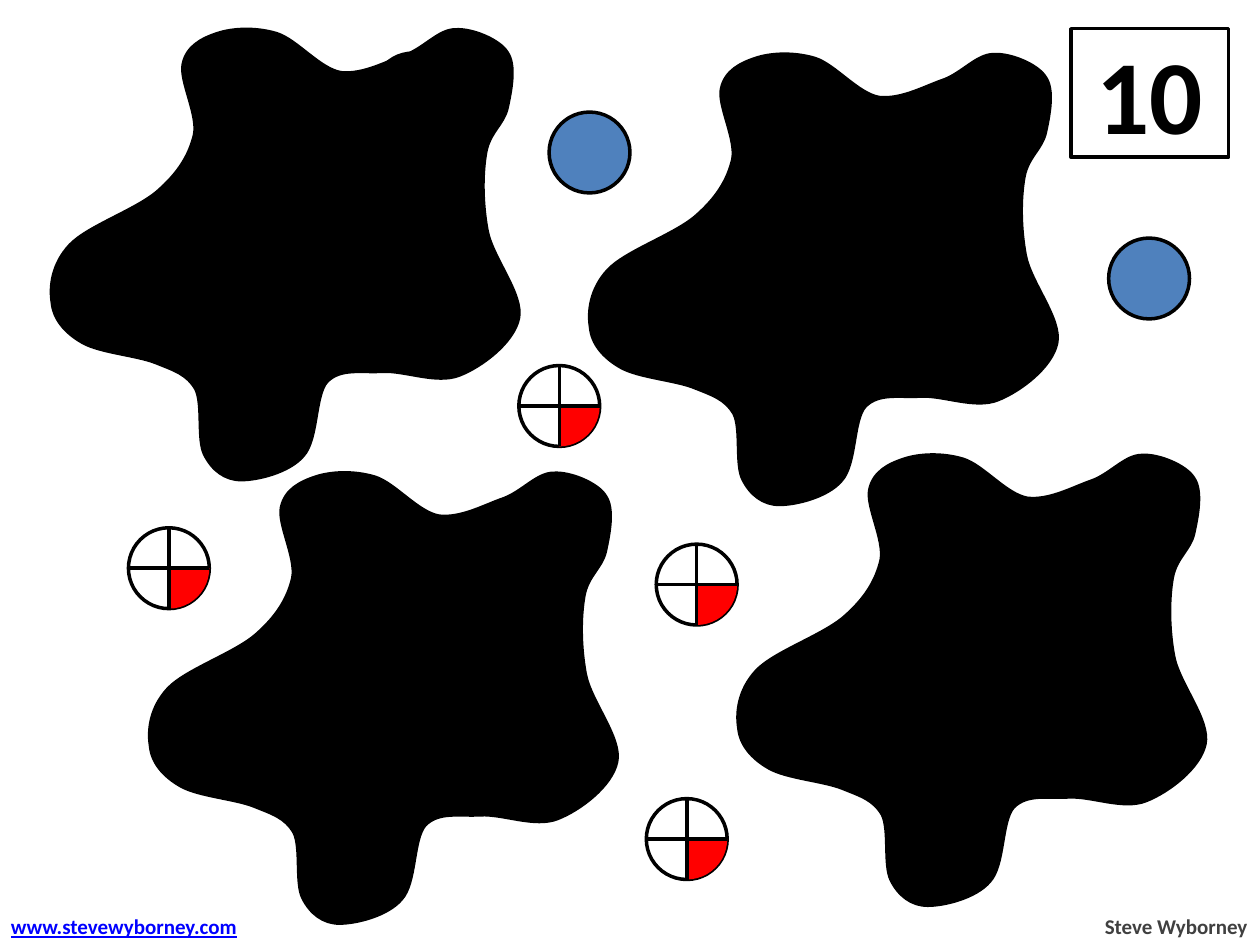
from lxml import etree
from pptx import Presentation
from pptx.dml.color import RGBColor
from pptx.enum import shapes, text
from pptx.oxml import ns
from pptx.util import Cm, Pt


def rgb(hex_colour):
    return RGBColor.from_string(hex_colour)


def paint(shape, fill=None, line=None):
    """Set fill and line, and take the shadow away."""
    if fill:
        shape.fill.solid()
        shape.fill.fore_color.rgb = rgb(fill)
    if line:
        shape.line.color.rgb = rgb(line)
        shape.line.width = Pt(2)
    elif fill:
        shape.line.fill.background()
    if hasattr(shape, "shadow"):
        shape.shadow.inherit = False
    else:
        etree.SubElement(shape._element.spPr, ns.qn("a:effectLst"))


BLACK, WHITE, BLUE, RED = "000000", "FFFFFF", "4F81BD", "FF0000"
DISC = 1.63

prs = Presentation()
prs.slide_width, prs.slide_height = Cm(25.4), Cm(19.05)
slide = prs.slides.add_slide(prs.slide_layouts[6])

# Total
total = slide.shapes.add_shape(
    shapes.MSO_SHAPE.RECTANGLE, Cm(21.59), Cm(0.58), Cm(3.18), Cm(2.59))
paint(total, WHITE, BLACK)
total.text_frame.vertical_anchor = text.MSO_ANCHOR.MIDDLE

# Whole discs
wholes = [(11.07, 2.26), (15.8, 13.41), (15.06, 3.25),
          (6.32, 9.86), (4.37, 7.24), (22.35, 4.8)]
for x, y in wholes:
    whole = slide.shapes.add_shape(
        shapes.MSO_SHAPE.OVAL, Cm(x), Cm(y), Cm(DISC), Cm(DISC))
    paint(whole, BLUE, BLACK)

# Discs with one quarter shaded
quarters = [(8.33, 5.49), (7.52, 1.07), (3.66, 3.18), (18.77, 2.24),
            (18.77, 5.92), (15.14, 7.9), (21.54, 9.91), (18.47, 9.98),
            (19.28, 12.98), (9.93, 10.41), (4.04, 13.64), (10.26, 14.25),
            (2.59, 10.64), (13.23, 10.97), (13.03, 16.1), (10.46, 7.37)]
for x, y in quarters:
    parts = slide.shapes.add_group_shape().shapes
    box = Cm(x), Cm(y), Cm(DISC), Cm(DISC)
    paint(parts.add_shape(shapes.MSO_SHAPE.OVAL, *box), WHITE, BLACK)
    shaded = parts.add_shape(shapes.MSO_SHAPE.PIE, *box)
    shaded.adjustments[0], shaded.adjustments[1] = 0, 54.36
    paint(shaded, RED)
    mid_x, mid_y = x + DISC / 2, y + DISC / 2
    for ends in ((mid_x, y, mid_x, y + DISC), (x, mid_y, x + DISC, mid_y)):
        cut = parts.add_connector(
            shapes.MSO_CONNECTOR.STRAIGHT, *[Cm(end) for end in ends])
        paint(cut, line=BLACK)

# Ink blots: a start point, then three Bezier points per curve,
# in hundredths of an inch as seen after the quarter turn
outline = [
    (66, 269),
    (52, 261), (43, 250), (42, 237), (40, 225), (42, 207), (56, 192),
    (70, 177), (109, 164), (126, 149), (142, 135), (151, 121), (155, 104),
    (158, 88), (143, 61), (146, 48), (149, 34), (161, 28), (173, 24),
    (185, 20), (203, 19), (220, 24), (236, 29), (254, 52), (271, 55),
    (289, 57), (308, 46), (323, 41), (338, 35), (349, 21), (362, 21),
    (375, 20), (397, 29), (403, 39), (410, 49), (406, 69), (403, 83),
    (400, 96), (389, 102), (386, 118), (383, 135), (383, 158), (387, 180),
    (391, 202), (416, 231), (412, 250), (408, 269), (383, 288), (365, 295),
    (347, 302), (322, 291), (304, 292), (287, 293), (271, 289), (260, 300),
    (250, 311), (253, 346), (241, 359), (230, 372), (205, 378), (192, 378),
    (179, 378), (169, 370), (163, 358), (157, 346), (162, 318), (156, 306),
    (149, 294), (139, 291), (124, 285), (109, 279), (80, 277), (66, 269),
]
upright = [(378 - y, x - 41) for x, y in outline]
for x, y in [(12.07, 0.86), (3.2, 9.3), (1.22, 0.36), (15.06, 8.94)]:
    builder = slide.shapes.build_freeform(*upright[0], scale=Cm(2.54) / 100)
    builder.add_line_segments(upright[1:], close=True)
    blot = builder.convert_to_shape(Cm(x), Cm(y))
    blot.rotation = 270
    paint(blot, BLACK, BLACK)
    lines = list(blot._element.iter(ns.qn("a:lnTo")))
    for first in range(0, len(upright) - 1, 3):
        curve = etree.Element(ns.qn("a:cubicBezTo"))
        lines[first].addprevious(curve)
        for line in lines[first:first + 3]:
            curve.append(line[0])
            line.getparent().remove(line)

# Footer
author = slide.shapes.add_textbox(Cm(22), Cm(18.29), Cm(3.4), Cm(0.76))
website = slide.shapes.add_textbox(Cm(-0.03), Cm(18.29), Cm(5.1), Cm(0.76))
for footer in (author, website):
    footer.text_frame.word_wrap = False
    footer.text_frame.auto_size = text.MSO_AUTO_SIZE.SHAPE_TO_FIT_TEXT

# Wording
wording = [
    (total, "10", text.PP_ALIGN.CENTER, BLACK, {"size": Pt(60)}),
    (author, "Steve Wyborney", text.PP_ALIGN.RIGHT, "404040", {"size": Pt(12)}),
    (website, "www.stevewyborney.com", text.PP_ALIGN.LEFT, "0000FF",
     {"size": Pt(12), "underline": True}),
]
for holder, words, alignment, colour, formats in wording:
    paragraph = holder.text_frame.paragraphs[0]
    paragraph.alignment = alignment
    run = paragraph.add_run()
    run.text = words
    run.font.color.rgb = rgb(colour)
    for attribute, value in {"name": "Calibri", "bold": True, **formats}.items():
        setattr(run.font, attribute, value)

prs.save("out.pptx")
